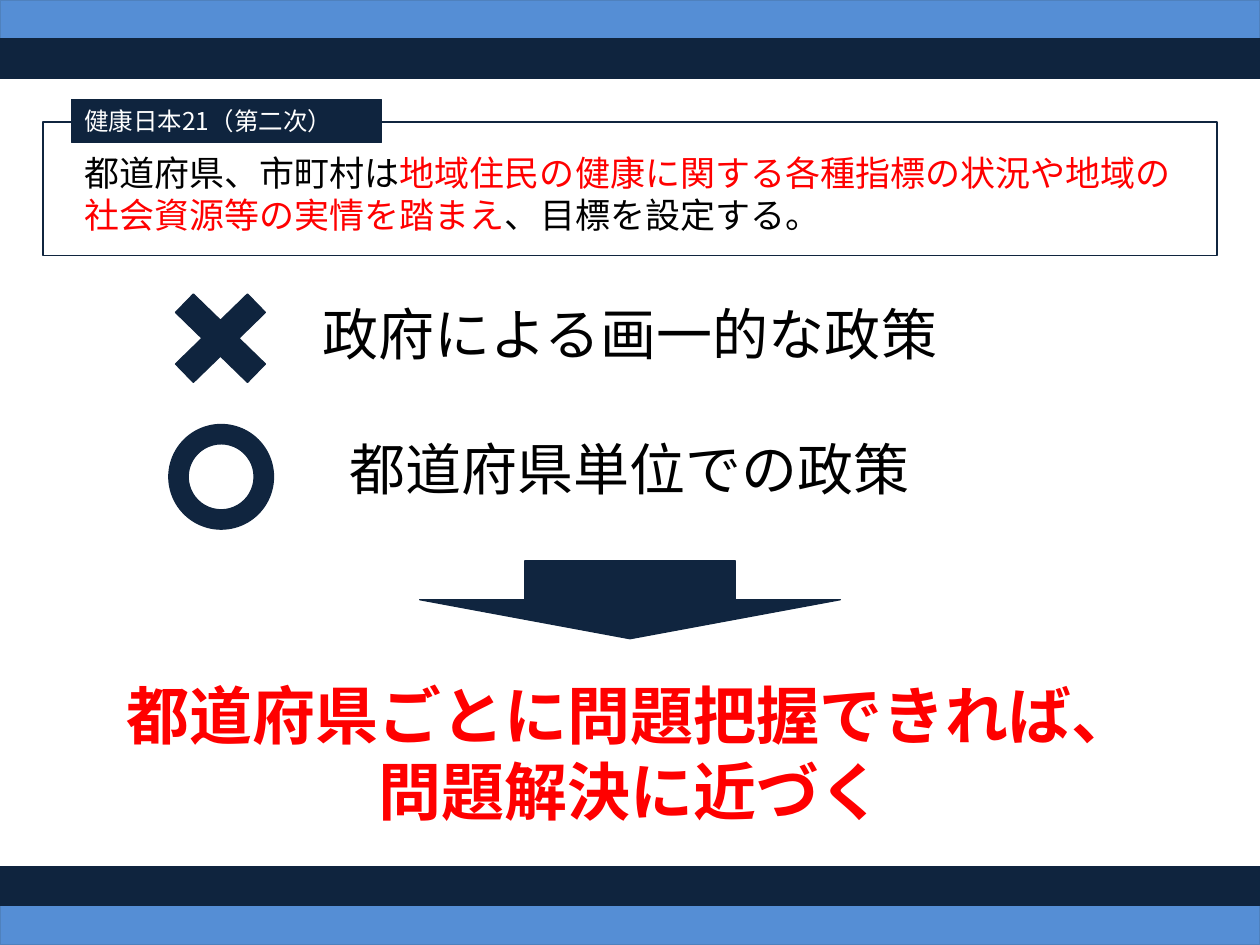
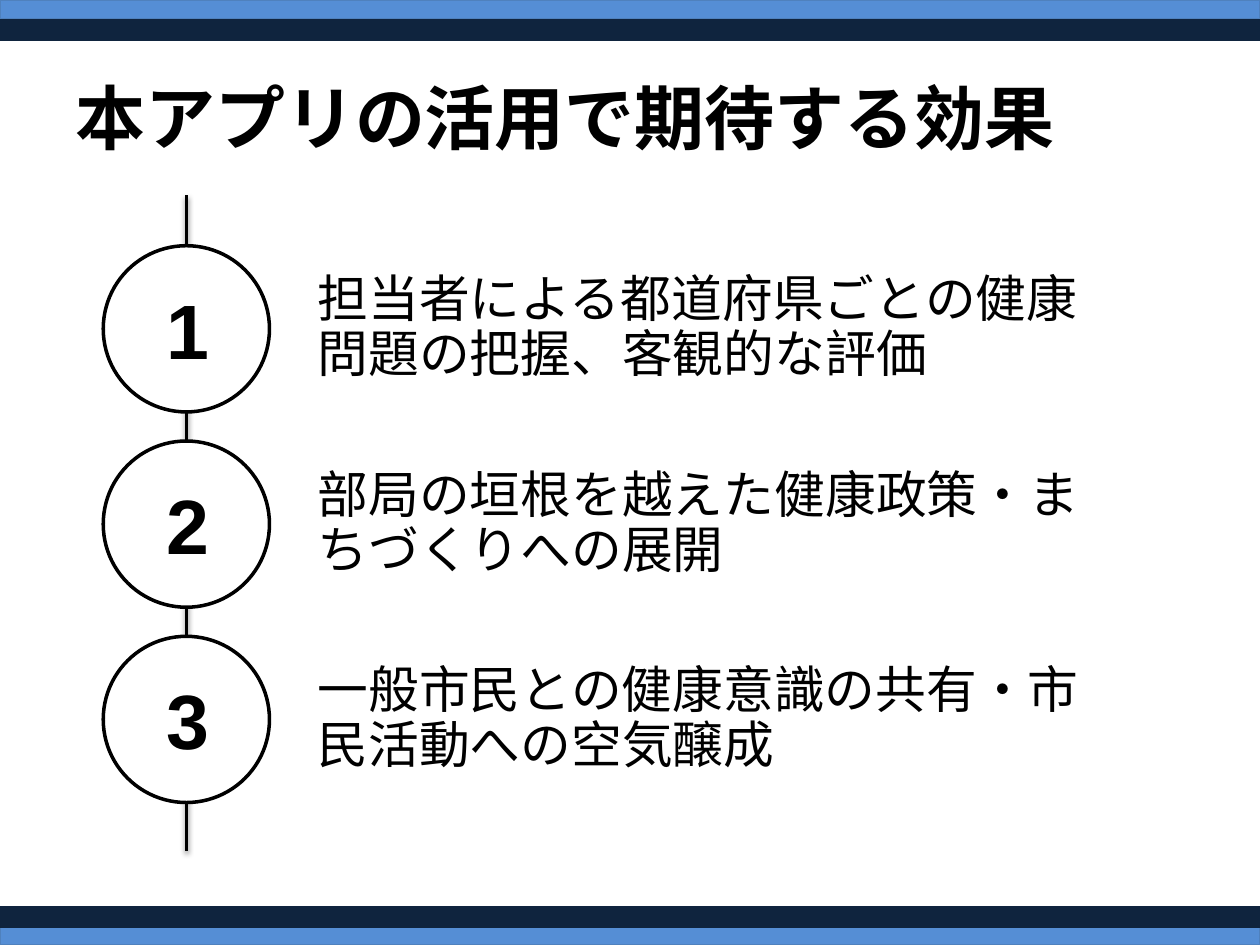
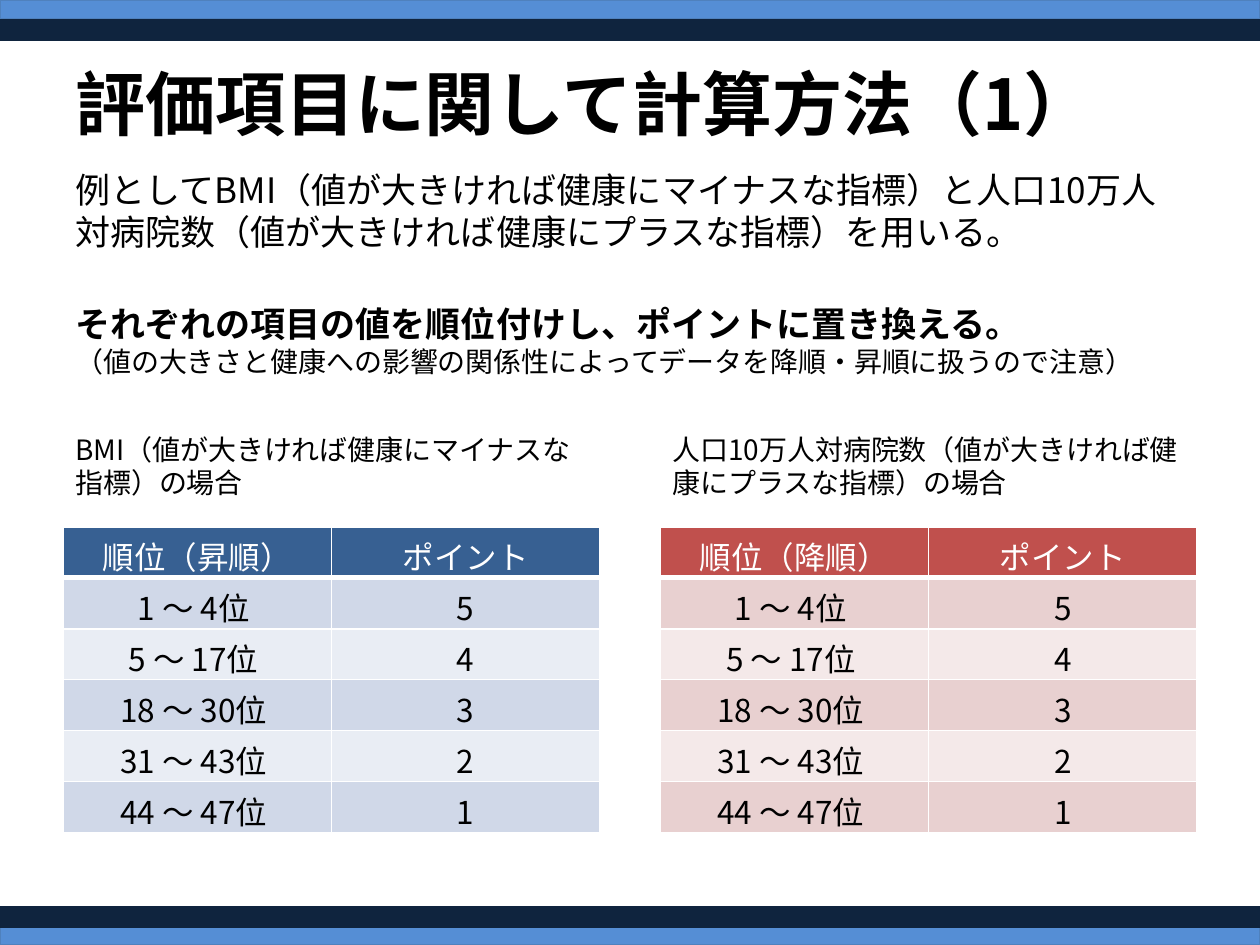
"""Builds three slides on prefectural health policy and its scoring method."""
from lxml.etree import SubElement
from pptx import Presentation
from pptx.dml.color import RGBColor
from pptx.enum.shapes import MSO_CONNECTOR, MSO_SHAPE as Kind
from pptx.enum.text import MSO_ANCHOR as Anchor, PP_ALIGN as Align
from pptx.oxml.ns import qn
from pptx.util import Pt

COLOURS = {
    "navy": "0F243E", "deep": "10253F", "sky": "558ED5", "edge": "4F81BD",
    "red": "FF0000", "black": "000000", "white": "FFFFFF",
    "blue head": "376092", "blue dark": "D0D8E8", "blue light": "E9EDF4",
    "rose head": "C0504D", "rose dark": "E8D0D0", "rose light": "F4E9E9",
}
RGB = {name: RGBColor.from_string(value) for name, value in COLOURS.items()}
GOTHIC = "Noto Sans CJK JP"
THICK_BANDS = [(0, 22.4, "sky"), (517.6, 22.4, "sky"), (495.2, 22.4, "navy"), (22.4, 22.4, "navy")]
THIN_BANDS = [(0, 10.8, "sky"), (11.5, 11.5, "navy"), (529.2, 10.8, "sky"), (518.2, 11.5, "navy")]


def draw(page, kind, box, fill, line, weight=0.75):
    """Add a preset shape; a fill of None leaves it hollow."""
    shape = page.shapes.add_shape(kind, *map(Pt, box))
    shape.shadow.inherit = False
    if fill:
        shape.fill.solid()
        shape.fill.fore_color.rgb = RGB[fill]
    else:
        shape.fill.background()
    shape.line.color.rgb = RGB[line]
    shape.line.width = Pt(weight)
    return shape


def write(holder, text, size, colour="black", bold=False, align=Align.LEFT, anchor=Anchor.TOP, font=GOTHIC):
    """Add one paragraph to a shape or cell and return it."""
    frame = holder.text_frame
    para = frame.add_paragraph() if frame.text else frame.paragraphs[0]
    frame.word_wrap = True
    frame.vertical_anchor = anchor
    para.text = text
    para.alignment = align
    para.font.size = Pt(size)
    para.font.bold = bold
    para.font.color.rgb = RGB[colour]
    para.font.name = font
    properties = para._p.pPr.find(qn("a:defRPr"))
    SubElement(properties, qn("a:ea"), typeface=font)
    return para


deck = Presentation()
deck.slide_width, deck.slide_height = Pt(720), Pt(540)
pages = [deck.slides.add_slide(deck.slide_layouts[6]) for _ in range(3)]
policy, effects, scoring = pages
for page, bands in zip(pages, (THICK_BANDS, THIN_BANDS, THIN_BANDS)):
    for top, height, colour in bands:
        draw(page, Kind.RECTANGLE, (0, top, 720, height), colour, "edge" if colour == "sky" else "navy")

draw(policy, Kind.RECTANGLE, (24.5, 69.8, 671, 76.3), None, "deep")
quote = policy.shapes.add_textbox(Pt(41), Pt(82.8), Pt(637.2), Pt(55.4))
para = write(quote, "都道府県、市町村は", 20)
for text, colour in [
    ("地域住民の健康に関する各種指標の状況や地域の社会資源等の実情を踏まえ", "red"),
    ("、目標を設定する。", "black"),
]:
    span = para.add_run()
    span.text = text
    span.font.color.rgb = RGB[colour]
label = draw(policy, Kind.RECTANGLE, (41, 56.9, 177.1, 24.5), "navy", "navy")
write(label, "健康日本21（第二次）", 14, "white", anchor=Anchor.MIDDLE)

cross = draw(policy, Kind.MATH_MULTIPLY, (86.4, 154.8, 79.2, 77), "navy", "navy")
cross.adjustments[0] = 0.191
ring = draw(policy, Kind.DONUT, (96.5, 242.6, 59.8, 59.8), "deep", "deep")
ring.adjustments[0] = 0.185
draw(policy, Kind.DOWN_ARROW, (239.8, 320.4, 240.4, 44.6), "deep", "deep")
for top, text in [(167.8, "政府による画一的な政策"), (244.8, "都道府県単位での政策")]:
    option = policy.shapes.add_textbox(Pt(144), Pt(top), Pt(432), Pt(46))
    write(option, text, 32, align=Align.CENTER)
conclusion = policy.shapes.add_textbox(Pt(56.9), Pt(383), Pt(606.2), Pt(94.3))
write(conclusion, "都道府県ごとに問題把握できれば、問題解決に近づく", 36, "red", True, Align.CENTER)

for page, top, height, text, font in [
    (effects, 21.6, 90, "本アプリの活用で期待する効果", "Arial"),
    (scoring, 29.5, 58.3, "評価項目に関して計算方法（1）", GOTHIC),
]:
    title = page.shapes.add_textbox(Pt(36), Pt(top), Pt(648), Pt(height))
    write(title, text, 40, bold=True, anchor=Anchor.MIDDLE, font=font)

spine = effects.shapes.add_connector(MSO_CONNECTOR.STRAIGHT, Pt(106.6), Pt(111.6), Pt(106.6), Pt(486))
spine.line.color.rgb = RGB["black"]
spine.line.width = Pt(2)
effect_list = SubElement(spine._element.spPr, qn("a:effectLst"))
shadow = SubElement(effect_list, qn("a:outerShdw"), blurRad=str(Pt(3.1)), dist=str(Pt(1.6)),
                    dir="5400000", rotWithShape="0")
shade = SubElement(shadow, qn("a:srgbClr"), val=COLOURS["black"])
SubElement(shade, qn("a:alpha"), val="38000")

for index, text in enumerate([
    "担当者による都道府県ごとの健康問題の把握、客観的な評価",
    "部局の垣根を越えた健康政策・まちづくりへの展開",
    "一般市民との健康意識の共有・市民活動への空気醸成",
]):
    top = 140.4 + 111.6 * index
    effect = draw(effects, Kind.RECTANGLE, (121, top + 9.4, 506.2, 76.3), "white", "white")
    para = write(effect, text, 29, anchor=Anchor.MIDDLE, font="Calibri")
    para.line_spacing = 0.9
    frame = effect.text_frame
    frame.margin_left = Pt(60.5)
    frame.margin_top = frame.margin_right = frame.margin_bottom = Pt(5.8)
    draw(effects, Kind.OVAL, (59, top, 95, 95), "white", "black", 2)
    number = effects.shapes.add_textbox(Pt(60), Pt(top + 17.3), Pt(95), Pt(60.5))
    write(number, str(index + 1), 44, bold=True, align=Align.CENTER, font="Arial")

example = scoring.shapes.add_textbox(Pt(36), Pt(92.9), Pt(648), Pt(55.4))
write(example, "例としてBMI（値が大きければ健康にマイナスな指標）と人口10万人対病院数（値が大きければ健康にプラスな指標）を用いる。", 20)
method = scoring.shapes.add_textbox(Pt(36), Pt(169.2), Pt(648), Pt(51.1))
write(method, "それぞれの項目の値を順位付けし、ポイントに置き換える。", 20, bold=True)
write(method, "（値の大きさと健康への影響の関係性によってデータを降順・昇順に扱うので注意）", 16)

ranks = ["1 〜 4位 ", "5 〜 17位 ", "18 〜 30位 ", "31 〜 43位 ", "44 〜 47位 "]
for left, hue, order, text in [
    (36, "blue", "昇順", "BMI（値が大きければ健康にマイナスな指標）の場合"),
    (377.3, "rose", "降順", "人口10万人対病院数（値が大きければ健康にプラスな指標）の場合"),
]:
    caption = scoring.shapes.add_textbox(Pt(left), Pt(243.4), Pt(306.7), Pt(46))
    write(caption, text, 16)
    rows = [(f"順位（{order}）", "ポイント")] + [(rank, str(5 - index)) for index, rank in enumerate(ranks)]
    table = scoring.shapes.add_table(len(rows), 2, Pt(left), Pt(301), Pt(306.7), Pt(175)).table
    for row_index, row in enumerate(rows):
        tone = "head" if row_index == 0 else "dark" if row_index % 2 else "light"
        for column_index, text in enumerate(row):
            cell = table.cell(row_index, column_index)
            write(cell, text, 18, "black" if row_index else "white", align=Align.CENTER)
            for side in "LRTB":
                heavy = (row_index, side) in [(0, "B"), (1, "T")]
                border = SubElement(cell._tc.get_or_add_tcPr(), qn(f"a:ln{side}"), w=str(Pt(3 if heavy else 1)))
                SubElement(SubElement(border, qn("a:solidFill")), qn("a:srgbClr"), val=COLOURS["white"])
            cell.fill.solid()
            cell.fill.fore_color.rgb = RGB[f"{hue} {tone}"]

deck.save("out.pptx")
